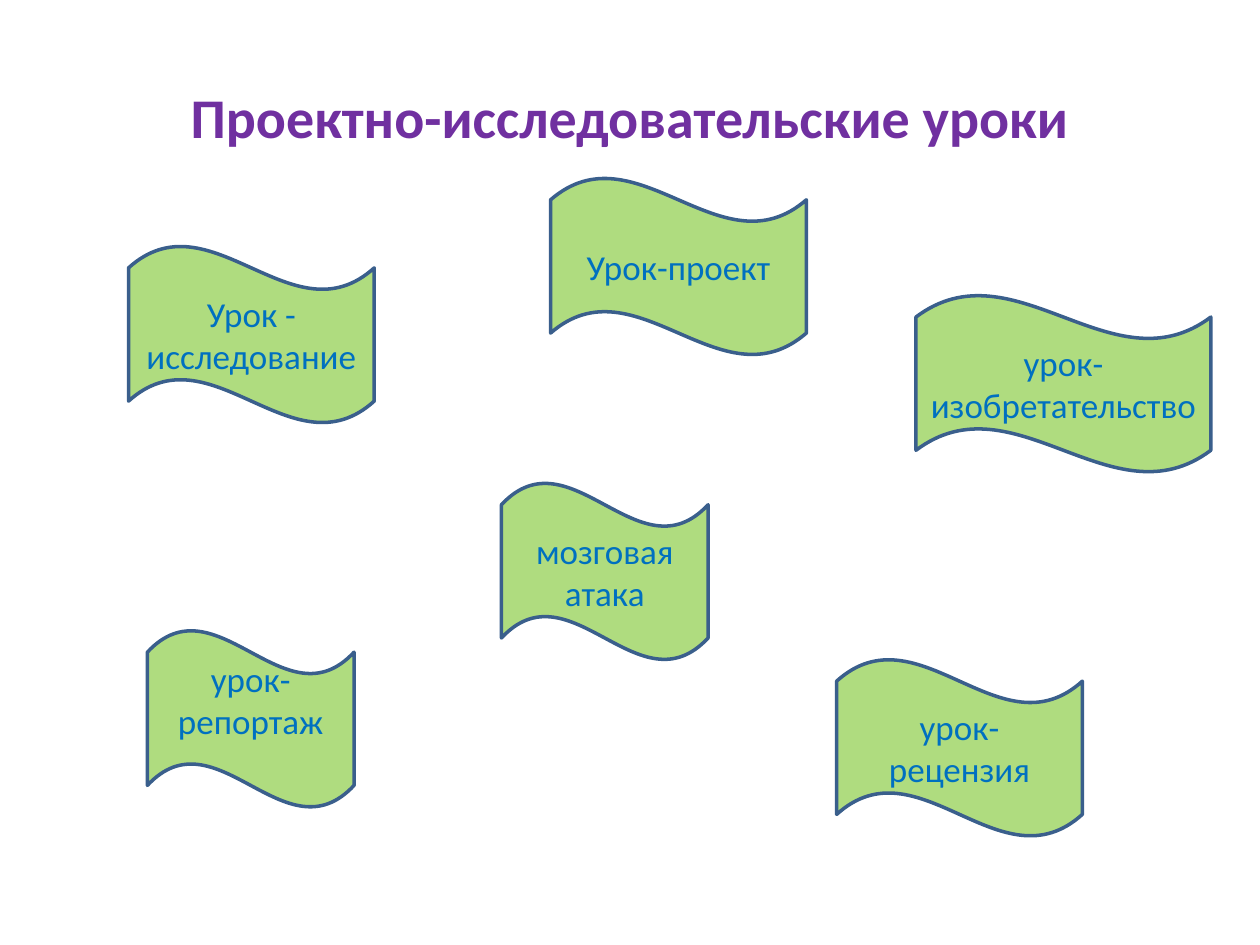
from lxml import etree
from pptx import Presentation
from pptx.dml.color import RGBColor
from pptx.enum.shapes import MSO_SHAPE
from pptx.enum.text import MSO_ANCHOR, PP_ALIGN
from pptx.oxml.ns import qn
from pptx.util import Inches, Pt

WAVE = MSO_SHAPE.WAVE
MIDDLE = MSO_ANCHOR.MIDDLE
CENTER = PP_ALIGN.CENTER
HEIGHT = 1.41
WAVES = [
    ("Урок - исследование", 1.02, 1.95, 1.95, 0.05),
    ("мозговая атака", 3.98, 3.83, 1.64, 0.05),
    ("урок-репортаж", 1.17, 5, 1.64, 0.35),
    ("Урок-проект", 4.37, 1.41, 2.03, 0.05),
    ("урок-рецензия", 6.64, 5.23, 1.95, 0.05),
    ("урок-изобретательство", 7.27, 2.34, 2.34, 0.05),
]


def paint(target, color):
    """Set a font or line colour, or a solid fill, from a hex string."""
    if hasattr(target, "solid"):
        target.solid()
        target = target.fore_color
    else:
        target = target.color
    target.rgb = RGBColor.from_string(color)


def write(shape, text, size=20, color="0070C0", bold=False, bottom=0.05):
    """Write centred text into a shape."""
    frame = shape.text_frame
    frame.word_wrap = True
    frame.vertical_anchor = MIDDLE
    frame.margin_bottom = Inches(bottom)
    line = frame.paragraphs[0]
    line.alignment = CENTER
    run = line.add_run()
    run.text = text
    run.font.name = "Calibri"
    run.font.size = Pt(size)
    run.font.bold = bold
    paint(run.font, color)


def add_title(slide, text, *box):
    """Place the heading in the given box."""
    title = slide.shapes.add_textbox(*map(Inches, box))
    write(title, text, size=32, color="7030A0", bold=True)


def add_wave(slide, text, *box, bottom):
    """Place a translucent green wave with its label in the given box."""
    wave = slide.shapes.add_shape(WAVE, *map(Inches, box))
    wave.shadow.inherit = False
    paint(wave.fill, "92D050")
    tint = wave.fill._xPr.find(qn("a:solidFill"))[0]
    etree.SubElement(tint, qn("a:alpha")).set("val", "73000")
    paint(wave.line, "3A5F8C")
    wave.line.width = Pt(2)
    write(wave, text, bottom=bottom)


def main():
    """Build and save the slide."""
    deck = Presentation()
    deck.slide_width, deck.slide_height = Inches(10), Inches(7.5)
    slide = deck.slides.add_slide(deck.slide_layouts[6])
    add_title(slide, "Проектно-исследовательские уроки", 0.5, 0.3, 9, 1.25)
    for text, left, top, width, bottom in WAVES:
        add_wave(slide, text, left, top, width, HEIGHT, bottom=bottom)
    deck.save("out.pptx")


if __name__ == "__main__":
    main()
